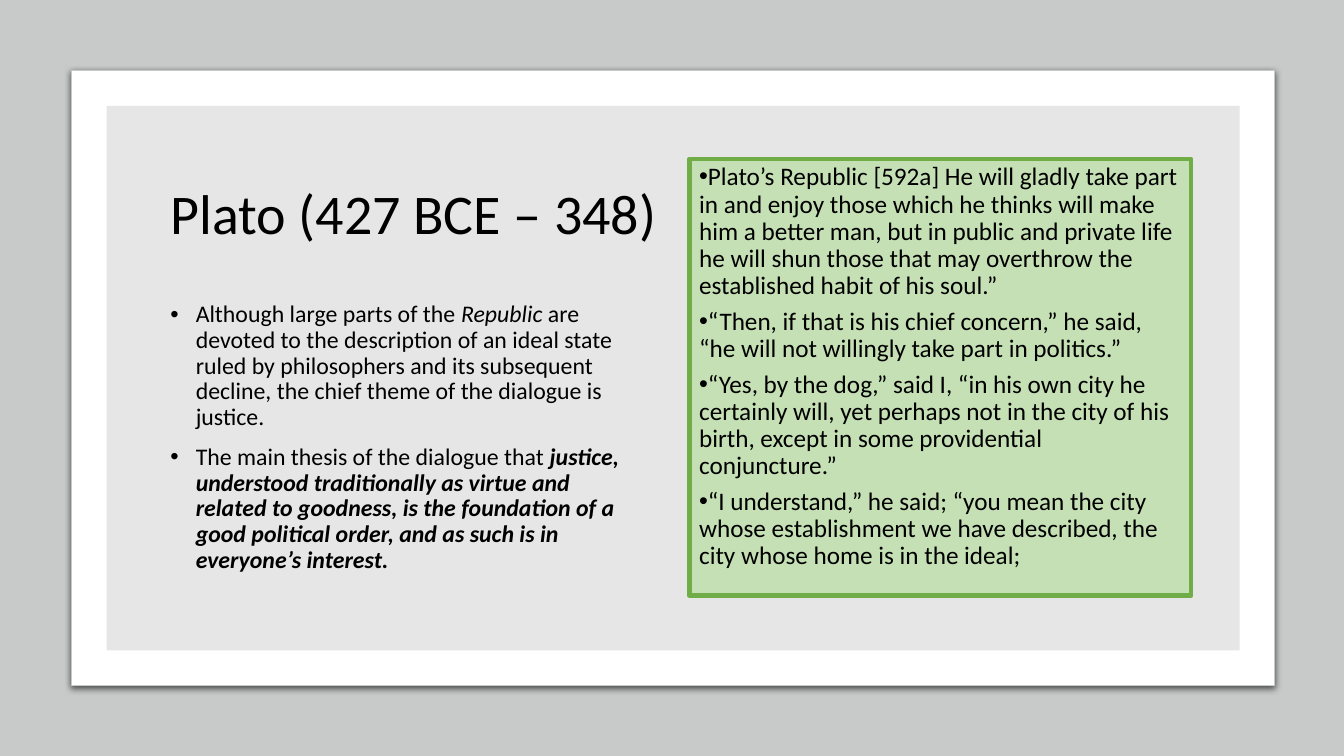
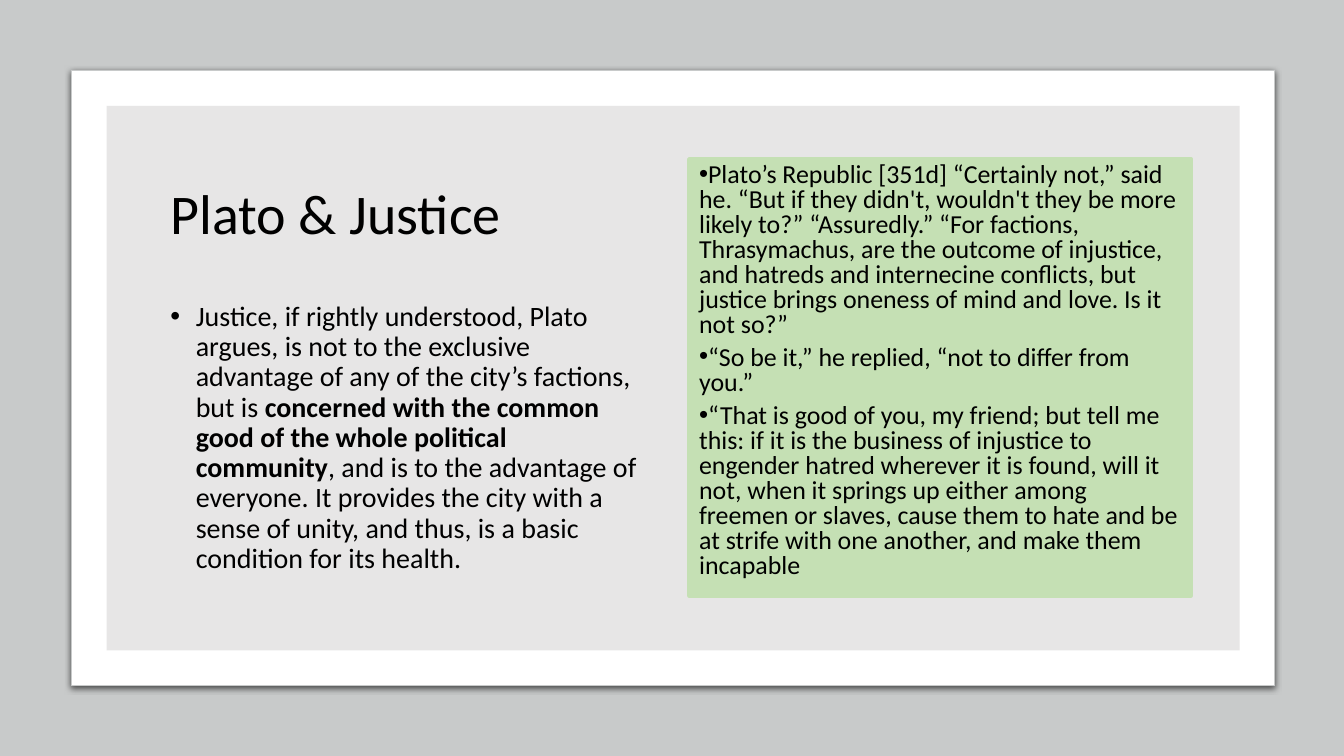
from lxml import etree
from pptx import Presentation
from pptx.dml.color import RGBColor
from pptx.enum.shapes import MSO_SHAPE
from pptx.enum.text import MSO_ANCHOR, MSO_AUTO_SIZE, PP_ALIGN
from pptx.oxml.ns import qn
from pptx.util import Cm, Pt

RECTANGLE = MSO_SHAPE.RECTANGLE
TOP, MIDDLE = MSO_ANCHOR.TOP, MSO_ANCHOR.MIDDLE
LEFT = PP_ALIGN.LEFT
NO_FIT = MSO_AUTO_SIZE.NONE

# Shared style
FONT = "Calibri"
BLACK, WHITE = "000000", "FFFFFF"
GREY, PANEL = "C8CACA", "E7E6E6"
PALE_GREEN, GREEN = "C5E0B4", "70AD47"
HANG = Cm(0.64)

# Places: left, top, width, height in centimetres
FRAME_AT = (1.8, 1.78, 30.33, 15.49)
PANEL_AT = (2.69, 2.67, 28.55, 13.72)
TITLE_AT = (4.04, 4.01, 25.98, 2.9)
BODY_AT = (4.04, 7.49, 12.45, 7.49)
QUOTE_AT = (17.37, 4.01, 12.65, 11)

# Text formats
BODY_SPACING = {"line_spacing": 0.9, "space_before": Pt(10), "space_after": Pt(0)}
BOLD = {"bold": True}
ITALIC = {"italic": True}
BOLD_ITALIC = {"bold": True, "italic": True}


def color(value):
    return RGBColor.from_string(value)


def set_values(target, values):
    for name, value in values.items():
        setattr(target, name, value)


class Deck:
    def __init__(self):
        self.deck = Presentation()
        self.deck.slide_width, self.deck.slide_height = Cm(33.87), Cm(19.05)
        self.page = None

    def new_page(self):
        """Start a slide with the grey ground, white frame and inner panel."""
        self.page = self.deck.slides.add_slide(self.deck.slide_layouts[1])
        ground = self.page.background.fill
        ground.solid()
        ground.fore_color.rgb = color(GREY)
        frame = self.rectangle(FRAME_AT, WHITE, GREY, 0.75)
        self.shadow(frame)
        self.rectangle(PANEL_AT, PANEL)

    def rectangle(self, at, fill, line=None, width=0):
        box = self.page.shapes.add_shape(RECTANGLE, *map(Cm, at))
        box.shadow.inherit = False
        box.fill.solid()
        box.fill.fore_color.rgb = color(fill)
        if line:
            box.line.color.rgb = color(line)
            box.line.width = Pt(width)
        else:
            box.line.fill.background()
        return box

    def shadow(self, box):
        effects = box.element.spPr.find(qn("a:effectLst"))
        outer = etree.SubElement(effects, qn("a:outerShdw"), blurRad=str(Pt(4.5)),
                                 dist=str(Pt(1.5)), dir="5400000", rotWithShape="0")
        tone = etree.SubElement(outer, qn("a:srgbClr"), val=BLACK)
        etree.SubElement(tone, qn("a:alpha"), val="63000")

    def place(self, holder, at):
        """Move a placeholder and bring it in front of the frame."""
        holder.left, holder.top, holder.width, holder.height = map(Cm, at)
        holder.element.getparent().append(holder.element)

    def title(self, text):
        holder = self.page.shapes.title
        self.place(holder, TITLE_AT)
        self.fill_text(holder, [text], 40, {"line_spacing": 0.9}, anchor=MIDDLE)

    def body(self, paragraphs, size):
        holder = self.page.placeholders[1]
        self.place(holder, BODY_AT)
        self.fill_text(holder, paragraphs, size, BODY_SPACING, margin=HANG)

    def quote(self, paragraphs, size, line, width, line_spacing):
        box = self.rectangle(QUOTE_AT, PALE_GREEN, line, width)
        spacing = {"line_spacing": line_spacing, "space_after": Pt(6)}
        self.fill_text(box, paragraphs, size, spacing, margin=0)

    def fill_text(self, box, paragraphs, size, spacing, margin=None, anchor=TOP):
        """Fill a box; a paragraph is a string or a list of (text, format)."""
        frame = box.text_frame
        set_values(frame, {"word_wrap": True, "auto_size": NO_FIT,
                           "vertical_anchor": anchor})
        for number, spans in enumerate(paragraphs):
            para = frame.add_paragraph() if number else frame.paragraphs[0]
            set_values(para, {"alignment": LEFT, **spacing})
            if margin is not None:
                self.bullet(para, margin)
            for text, extra in [(spans, {})] if isinstance(spans, str) else spans:
                span = para.add_run()
                span.text = text
                set_values(span.font, {"name": FONT, "size": Pt(size), **extra})
                span.font.color.rgb = color(BLACK)

    def bullet(self, para, margin):
        properties = para._p.get_or_add_pPr()
        properties.set("marL", str(margin))
        properties.set("indent", str(-HANG))
        etree.SubElement(properties, qn("a:buFont"), typeface="Arial")
        etree.SubElement(properties, qn("a:buChar"), char="•")


def main():
    show = Deck()

    # Plato and the Republic
    show.new_page()
    show.title("Plato (427 BCE – 348)")
    show.body([
        [("Although large parts of the ", {}),
         ("Republic", ITALIC),
         (" are devoted to the description of an ideal state ruled by philosophers "
          "and its subsequent decline, the chief theme of the dialogue is justice.", {})],
        [("The main thesis of the dialogue that ", {}),
         ("justice, understood traditionally as virtue and related to goodness, is the "
          "foundation of a good political order, and as such is in everyone’s interest.",
          BOLD_ITALIC)],
    ], size=17)
    show.quote([
        "Plato’s Republic [592a] He will gladly take part in and enjoy those which he "
        "thinks will make him a better man, but in public and private life he will shun "
        "those that may overthrow the established habit of his soul.”",
        "“Then, if that is his chief concern,” he said, “he will not willingly take part "
        "in politics.”",
        "“Yes, by the dog,” said I, “in his own city he certainly will, yet perhaps not "
        "in the city of his birth, except in some providential conjuncture.”",
        "“I understand,” he said; “you mean the city whose establishment we have "
        "described, the city whose home is in the ideal;",
    ], size=18, line=GREEN, width=3.25, line_spacing=0.9)

    # Justice
    show.new_page()
    show.title("Plato & Justice")
    show.body([
        [("Justice, if rightly understood, Plato argues, is not to the exclusive "
          "advantage of any of the city’s factions, but is ", {}),
         ("concerned with the common good of the whole political community", BOLD),
         (", and is to the advantage of everyone. It provides the city with a sense of "
          "unity, and thus, is a basic condition for its health.", {})],
    ], size=20)
    show.quote([
        "Plato’s Republic [351d] “Certainly not,” said he. “But if they didn't, wouldn't "
        "they be more likely to?” “Assuredly.” “For factions, Thrasymachus, are the "
        "outcome of injustice, and hatreds and internecine conflicts, but justice brings "
        "oneness of mind and love. Is it not so?”",
        "“So be it,” he replied, “not to differ from you.”",
        "“That is good of you, my friend; but tell me this: if it is the business of "
        "injustice to engender hatred wherever it is found, will it not, when it springs "
        "up either among freemen or slaves, cause them to hate and be at strife with one "
        "another, and make them incapable",
    ], size=18.5, line=PALE_GREEN, width=3, line_spacing=0.8)

    show.deck.save("out.pptx")


if __name__ == "__main__":
    main()
